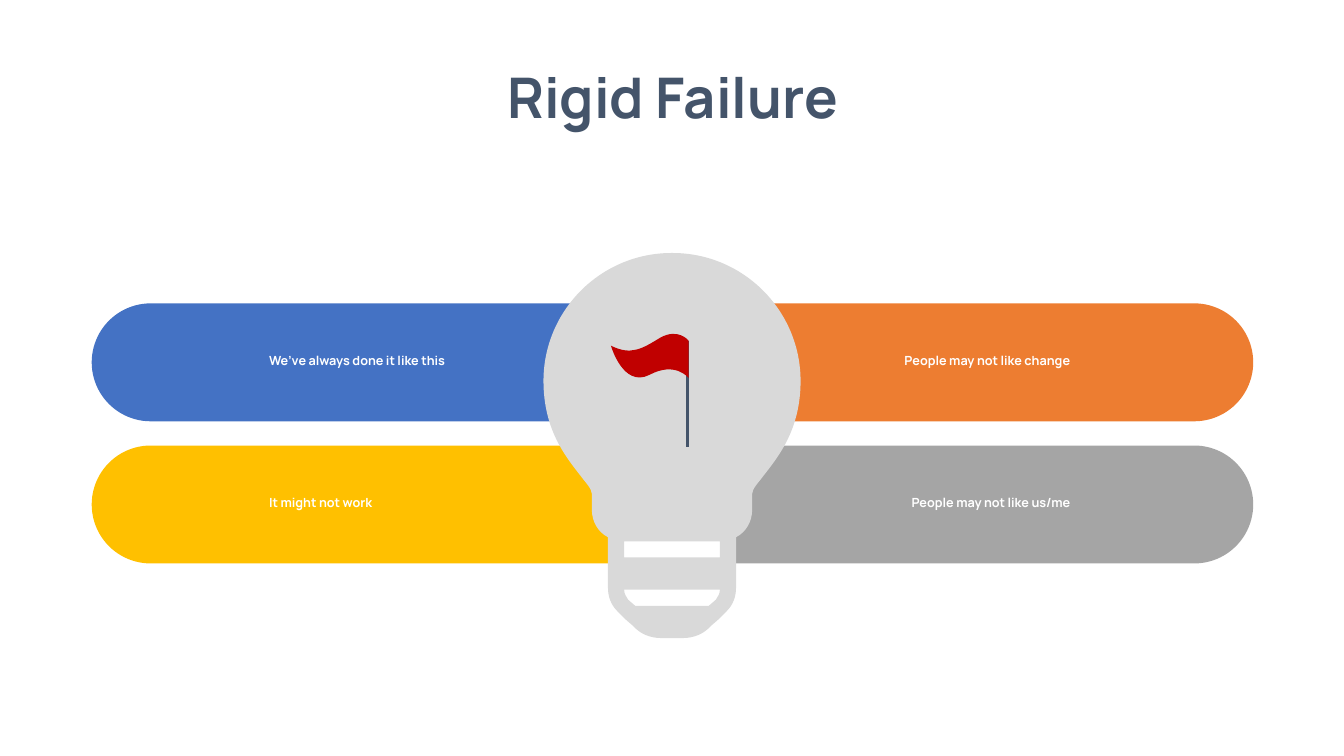
from lxml.etree import SubElement
from pptx import Presentation
from pptx.dml.color import RGBColor
from pptx.enum.shapes import MSO_SHAPE
from pptx.enum.text import MSO_AUTO_SIZE, PP_ALIGN
from pptx.oxml.ns import qn
from pptx.util import Pt

PX = 9144  # 100 px to the inch
color = RGBColor.from_string

prs = Presentation()
prs.slide_width, prs.slide_height = 1333 * PX, 750 * PX
s = prs.slides.add_slide(prs.slide_layouts[6])


def add_text(text, x, y, w, h, size=9, fill="FFFFFF", align=PP_ALIGN.LEFT, wrap=True):
    tf = s.shapes.add_textbox(x * PX, y * PX, w * PX, h * PX).text_frame
    tf.word_wrap = wrap
    tf.auto_size = MSO_AUTO_SIZE.SHAPE_TO_FIT_TEXT
    p = tf.paragraphs[0]
    p.alignment = align
    r = p.add_run()
    r.text = text
    r.font.name, r.font.size, r.font.bold = "Manrope", Pt(size), True
    r.font.color.rgb = color(fill)


def symmetric(*steps):
    """Complete a right half, drawn downwards, with its mirror image on the left."""
    halves = [[(step[i], step[i + 1]) for i in range(0, len(step), 2)] for step in steps]
    back = [halves[-1][-1:]]
    for before, step in reversed(list(zip(halves, halves[1:]))):
        back.append([*reversed(step[:-1]), before[-1]])
    return [*steps, *(tuple(v for x, y in step for v in (1333 - x, y)) for step in back)]


# Title
add_text("Rigid Failure", 479, 57, 376, 77, size=40, fill="44546A",
         align=PP_ALIGN.CENTER, wrap=False)

# Pills
painted = []
for i, fill in enumerate(("4472C4", "FFC000", "ED7D31", "A5A5A5")):
    col, row = divmod(i, 2)
    sp = s.shapes.add_shape(MSO_SHAPE.ROUNDED_RECTANGLE, (91 + 582 * col) * PX,
                            (301 + 141 * row) * PX, 570 * PX, 117 * PX)
    sp.adjustments[0] = 0.5
    painted.append((sp, fill))

# Statements
statements = ["We’ve always done it like this", "It might not work",
              "People may not like change", "People may not like us/me"]
for i, text in enumerate(statements):
    col, row = divmod(i, 2)
    add_text(text, 257 + 585 * col, 345 + 141 * row, 229, 25,
             align=(PP_ALIGN.LEFT, PP_ALIGN.RIGHT)[col])

# White backing behind the slots of the bulb
sp = s.shapes.add_shape(MSO_SHAPE.RECTANGLE, 611 * PX, 505 * PX, 109 * PX, 77 * PX)
painted.append((sp, "FFFFFF"))

# Outlines: a start point, then lines (x, y) and curves (x1, y1, x2, y2, x, y)
lower_slot = symmetric((714, 585), (714, 589, 712, 592, 710, 595), (703, 601))
upper_slot = symmetric((714, 537), (714, 553))
glass = symmetric(
    (667, 251), (737, 251, 794, 308, 794, 378), (794, 426, 772, 453, 758, 471),
    (752, 479, 746, 485, 746, 490), (746, 506), (746, 517, 740, 528, 730, 533),
    (730, 583), (730, 592, 727, 600, 721, 606), (712, 615), (705, 621),
    (698, 629, 688, 633, 677, 633))
pole = [(680, 338), (683, 338), (683, 444), (680, 444)]
flag = [(683, 338), (683, 338, 673, 325, 655, 335), (637, 346, 626, 353, 606, 343),
        (606, 343, 618, 385, 644, 372), (670, 358, 683, 375, 683, 375)]

# Light bulb and the red flag on its pole
drawings = [
    ((539, 251, 255, 382), [lower_slot, upper_slot, glass], "D9D9D9"),
    ((680, 338, 3, 106), [pole], "44546A"),
    ((606, 332, 77, 44), [flag], "C00000"),
]
for (x, y, w, h), contours, fill in drawings:
    builder = s.shapes.build_freeform(x, y, scale=PX)
    builder.add_line_segments([(x + w, y), (x + w, y + h), (x, y + h)])
    sp = builder.convert_to_shape()
    outline = next(sp._element.iter(qn("a:path")))
    outline.set("w", str(w * PX))
    outline.set("h", str(h * PX))
    for child in list(outline):
        outline.remove(child)
    for contour in contours:
        for i, step in enumerate(contour):
            tag = "a:moveTo" if i == 0 else "a:lnTo" if len(step) == 2 else "a:cubicBezTo"
            command = SubElement(outline, qn(tag))
            for px, py in zip(step[::2], step[1::2]):
                SubElement(command, qn("a:pt"), x=str((px - x) * PX), y=str((py - y) * PX))
        SubElement(outline, qn("a:close"))
    painted.append((sp, fill))

# Plain fills without outline or shadow
for sp, fill in painted:
    sp.shadow.inherit = False
    sp.fill.solid()
    sp.fill.fore_color.rgb = color(fill)
    sp.line.fill.background()

prs.save("out.pptx")
